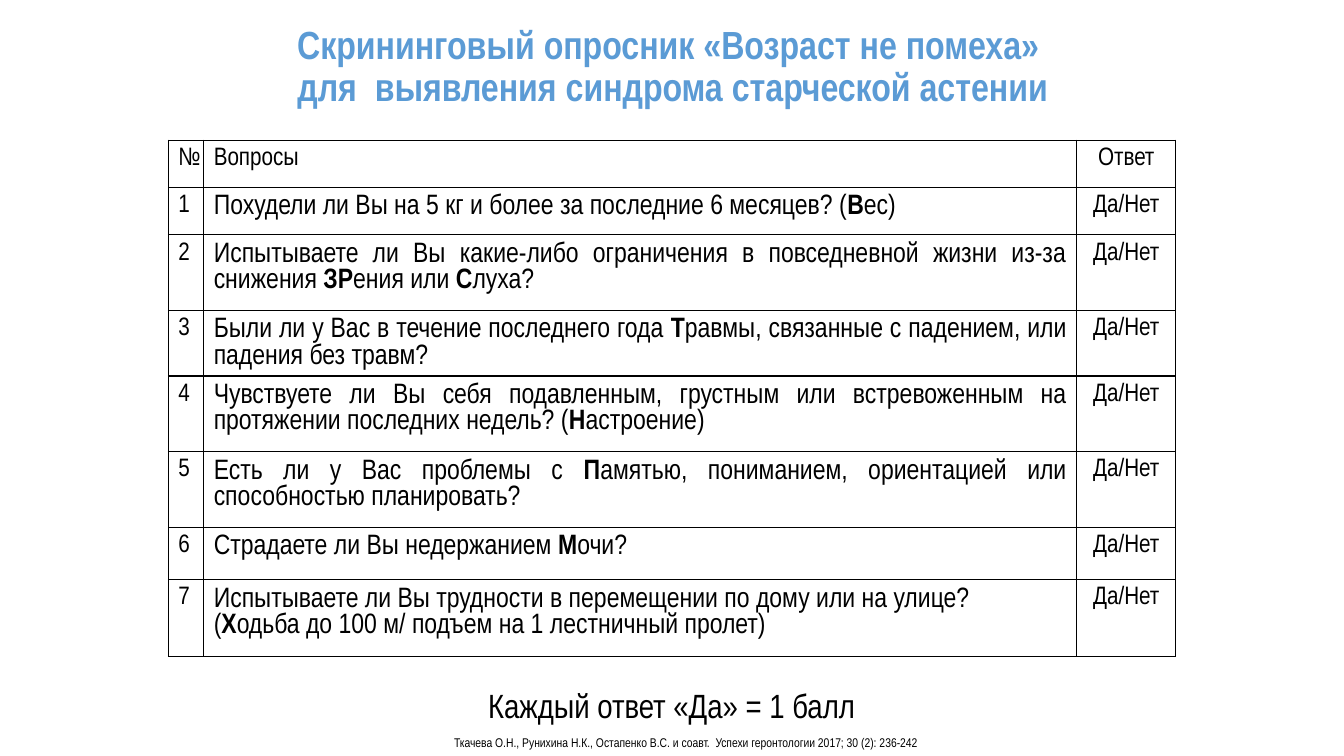
import pptx
import pptx.util
import pptx.dml.color
import pptx.enum.text
import pptx.oxml
import pptx.oxml.ns

Inches = pptx.util.Inches
Pt = pptx.util.Pt
ALIGN = pptx.enum.text.PP_ALIGN
ANCHOR = pptx.enum.text.MSO_ANCHOR

FONT = "Arial Narrow"
COLORS = {"title": "5B9BD5", "text": "000000", "line": "000000"}

TITLE = "Скрининговый опросник «Возраст не помеха» \vдля  выявления синдрома старческой астении"
SCORE = "Каждый ответ «Да» = 1 балл"
CREDIT = "Ткачева О.Н., Рунихина Н.К., Остапенко В.С. и соавт.  Успехи геронтологии 2017; 30 (2): 236-242"

HEAD = ("№", "Вопросы", "Ответ")
ANSWER = "Да/Нет"
ASKS = [
    "Похудели ли Вы на 5 кг и более за последние 6 месяцев? (*В*ес)",
    "Испытываете ли Вы какие-либо ограничения в повседневной жизни из-за снижения *ЗР*ения или *С*луха?",
    "Были ли у Вас в течение последнего года *Т*равмы, связанные с падением, или падения без травм?",
    "Чувствуете ли Вы себя подавленным, грустным или встревоженным на протяжении последних недель? (*Н*астроение)",
    "Есть ли у Вас проблемы с *П*амятью, пониманием, ориентацией или способностью планировать?",
    "Страдаете ли Вы недержанием* М*очи?",
    "Испытываете ли Вы трудности в перемещении по дому или на улице? \n(*Х*одьба до 100 м/ подъем на 1 лестничный пролет)",
]
COLS = (0.35, 8.66, 0.98)
ROWS = (0.47, 0.47, 0.75, 0.65, 0.75, 0.75, 0.52, 0.76)

LABELS = [
    (TITLE, (2.17, 0.05, 9, 1.25), 28, "title", True, 0.9),
    (SCORE, (1.76, 6.74, 9.8, 0.5), 24, "text", False, 1.0),
    (CREDIT, (1.94, 7.24, 9.72, 0.25), 9, "text", False, 1.0),
]


def style(run, size, color, bold):
    run.font.name = FONT
    run.font.size = Pt(size)
    run.font.bold = bold
    run.font.color.rgb = pptx.dml.color.RGBColor.from_string(COLORS[color])


def add_label(slide, text, box, size, color, bold, space):
    frame = slide.shapes.add_textbox(*map(Inches, box)).text_frame
    frame.word_wrap = True
    frame.vertical_anchor = ANCHOR.MIDDLE
    frame.text = text
    para = frame.paragraphs[0]
    para.alignment = ALIGN.CENTER
    para.line_spacing = space
    for run in para.runs:
        style(run, size, color, bold)


def add_edges(cell):
    props = cell._tc.get_or_add_tcPr()
    for spot, side in enumerate(("lnL", "lnR", "lnT", "lnB")):
        props.insert(spot, pptx.oxml.parse_xml(
            f'<a:{side} {pptx.oxml.ns.nsdecls("a")} w="{Pt(1)}"><a:solidFill>'
            f'<a:srgbClr val="{COLORS["line"]}"/></a:solidFill></a:{side}>'))


def fill_cell(cell, text, size, align):
    cell.fill.background()
    cell.margin_left = cell.margin_right = Inches(0.1)
    cell.margin_top, cell.margin_bottom = Inches(0.07), Inches(0.05)
    frame = cell.text_frame
    for row, line in enumerate(text.split("\n")):
        para = frame.add_paragraph() if row else frame.paragraphs[0]
        para.alignment = align
        para.line_spacing = 1.0
        for part, words in enumerate(line.split("*")):
            run = para.add_run()
            run.text = words
            style(run, size, "text", part % 2 == 1)
    add_edges(cell)


def add_quiz(slide):
    data = [HEAD] + [(str(num), ask, ANSWER) for num, ask in enumerate(ASKS, 1)]
    box = (1.67, 1.39, sum(COLS), sum(ROWS))
    table = slide.shapes.add_table(len(ROWS), len(COLS), *map(Inches, box)).table
    table.first_row = table.horz_banding = False
    for col, width in zip(table.columns, COLS):
        col.width = Inches(width)
    for row, height in zip(table.rows, ROWS):
        row.height = Inches(height)
    for r, line in enumerate(data):
        for c, text in enumerate(line):
            size = 20 if r and c == 1 else 18
            align = ALIGN.CENTER if c == 2 else ALIGN.JUSTIFY
            fill_cell(table.cell(r, c), text, size, align)


def main():
    deck = pptx.Presentation()
    deck.slide_width, deck.slide_height = Inches(13.33), Inches(7.5)
    slide = deck.slides.add_slide(deck.slide_layouts[6])
    add_quiz(slide)
    for label in LABELS:
        add_label(slide, *label)
    deck.save("out.pptx")


if __name__ == "__main__":
    main()
